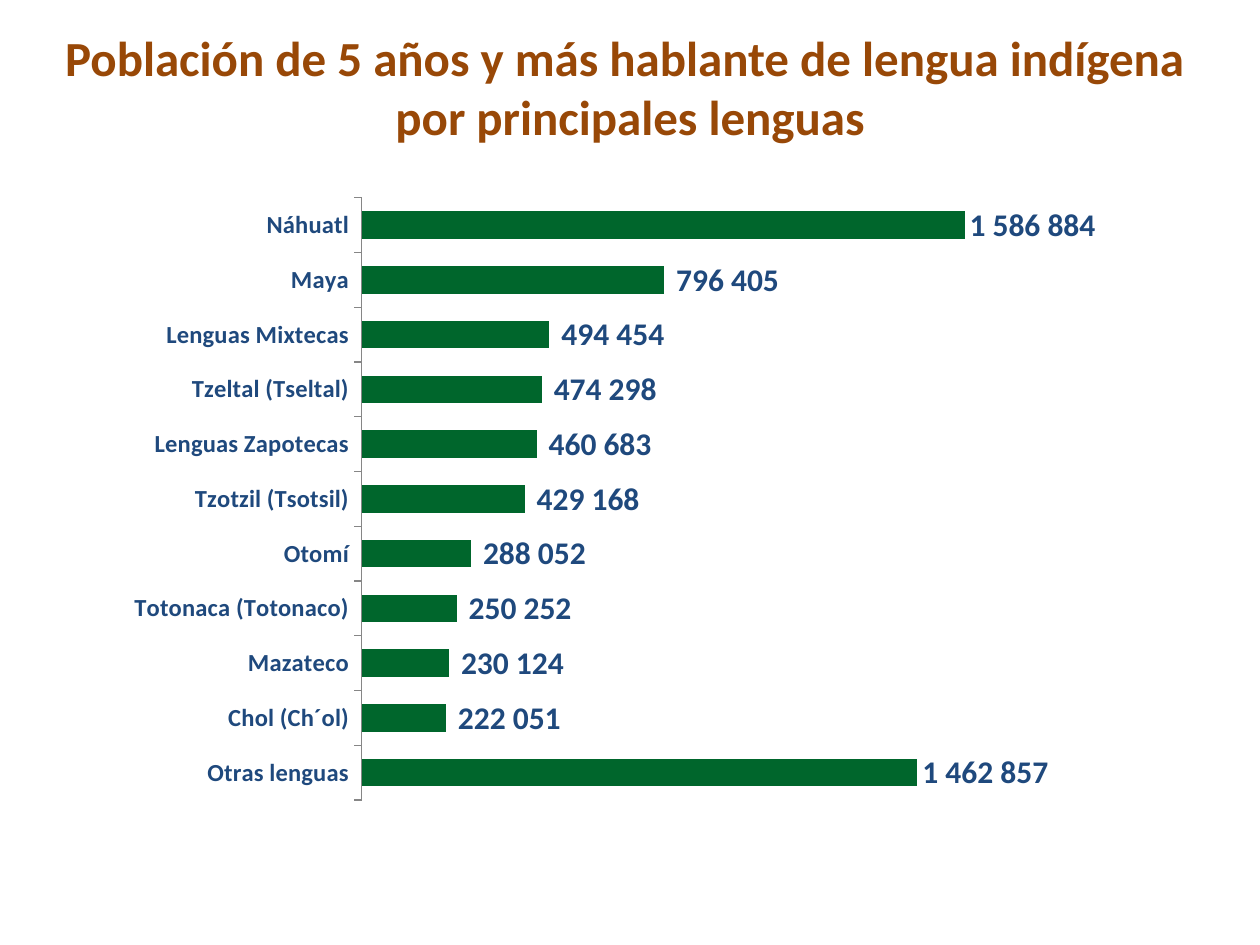
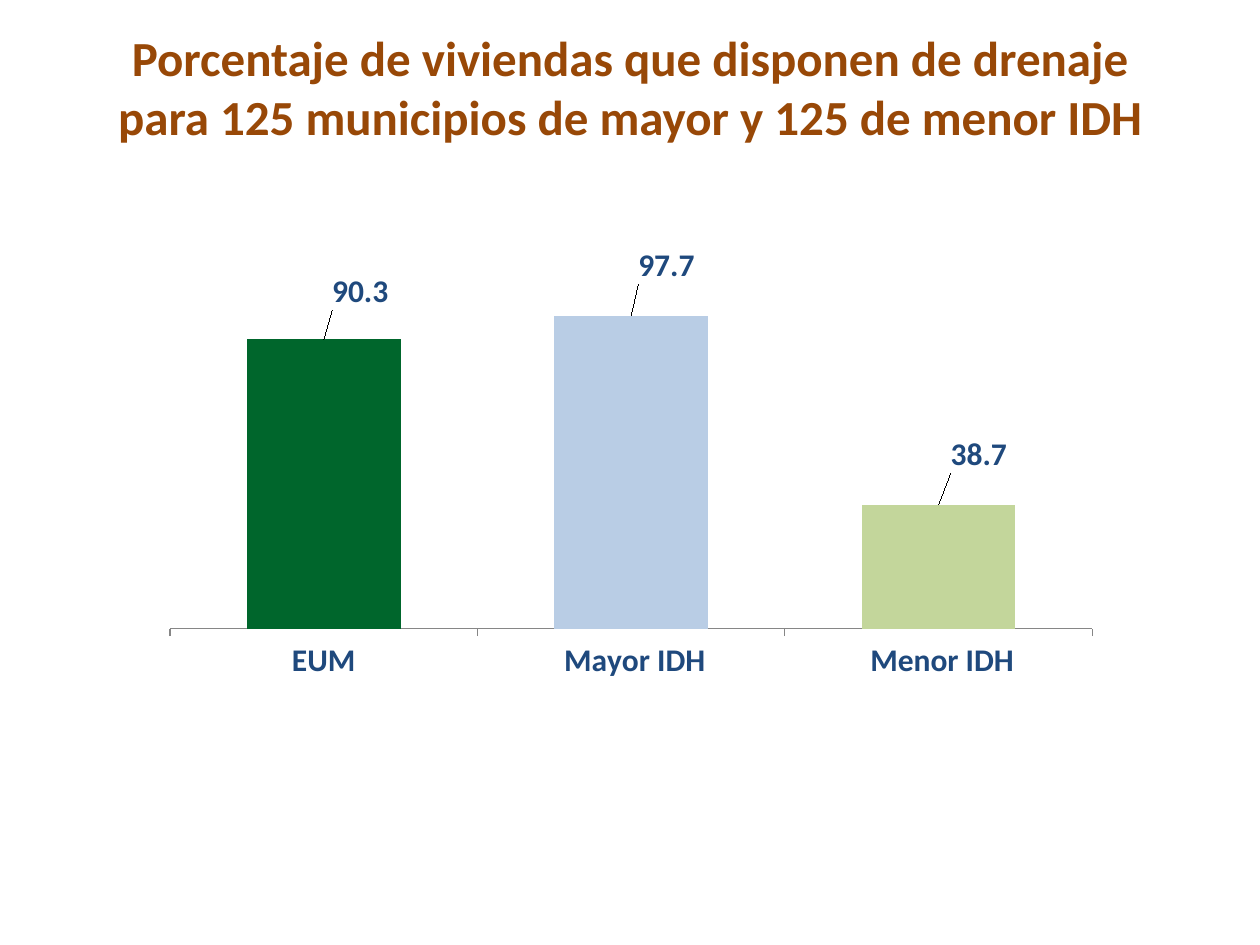
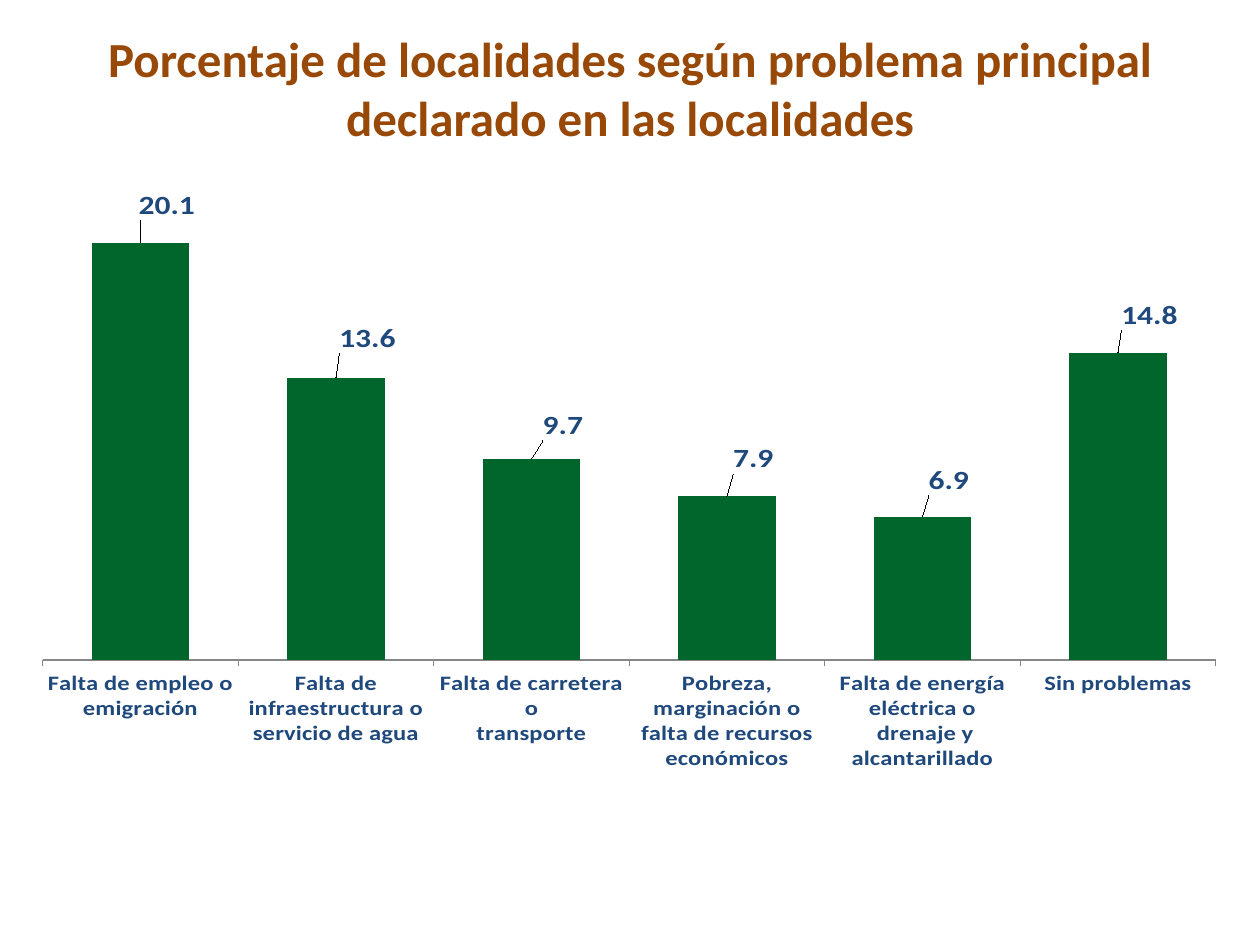
import pptx
import pptx.chart.data
import pptx.dml.color
import pptx.enum.chart
import pptx.enum.text
import pptx.oxml
import pptx.oxml.ns
import pptx.util
from pptx.dml.color import RGBColor
from pptx.enum.chart import XL_CHART_TYPE, XL_LABEL_POSITION, XL_TICK_LABEL_POSITION, XL_TICK_MARK
from pptx.util import Inches

# Shared colours and font
BROWN = RGBColor(0x98, 0x48, 0x07)
NAVY = RGBColor(0x1F, 0x49, 0x7D)
GREEN = RGBColor(0x00, 0x66, 0x2C)
PALE_BLUE = RGBColor(0xB9, 0xCD, 0xE5)
PALE_GREEN = RGBColor(0xC3, 0xD6, 0x9B)
GREY = RGBColor(0x86, 0x86, 0x86)
FONT = "Calibri"
TITLE_ONLY = 5


class Deck:
    """Holds the style and the current slide."""

    def __init__(self):
        self.presentation = pptx.Presentation()
        self.presentation.slide_width = Inches(10)
        self.presentation.slide_height = Inches(7.5)
        self.slide = None

    def style_font(self, font, size, color):
        font.name = FONT
        font.size = pptx.util.Pt(size)
        font.bold = True
        font.color.rgb = color

    def add_slide(self, title_lines, title_top, title_height):
        layout = self.presentation.slide_layouts[TITLE_ONLY]
        self.slide = self.presentation.slides.add_slide(layout)
        title = self.slide.shapes.title
        title.left, title.top = Inches(0), Inches(title_top)
        title.width, title.height = Inches(10), Inches(title_height)
        frame = title.text_frame
        frame.margin_left = frame.margin_right = frame.margin_top = frame.margin_bottom = 0
        frame.word_wrap = False
        frame.auto_size = pptx.enum.text.MSO_AUTO_SIZE.NONE
        frame.vertical_anchor = pptx.enum.text.MSO_ANCHOR.TOP
        paragraph = frame.paragraphs[0]
        paragraph.alignment = pptx.enum.text.PP_ALIGN.CENTER
        for index, line in enumerate(title_lines):
            if index:
                paragraph.add_line_break()
            run = paragraph.add_run()
            run.text = line
            self.style_font(run.font, 28, BROWN)

    def add_bars(self, kind, box, plot_box, values, maximum, number_format, axis_size):
        """Add a one-series bar chart; values maps each category to its value."""
        data = pptx.chart.data.CategoryChartData(number_format=number_format)
        data.categories = list(values)
        data.add_series("Series 1", list(values.values()))
        chart = self.slide.shapes.add_chart(kind, *map(Inches, box), data).chart
        chart.has_title = False
        chart.has_legend = False
        chart.font.name = FONT
        chart.font.size = pptx.util.Pt(10)

        # Axes
        category_axis = chart.category_axis
        category_axis.has_major_gridlines = False
        category_axis.major_tick_mark = XL_TICK_MARK.OUTSIDE
        category_axis.format.line.color.rgb = GREY
        self.style_font(category_axis.tick_labels.font, axis_size, NAVY)
        value_axis = chart.value_axis
        value_axis.minimum_scale = 0
        value_axis.maximum_scale = maximum
        value_axis.has_major_gridlines = False
        value_axis.major_tick_mark = XL_TICK_MARK.NONE
        value_axis.tick_label_position = XL_TICK_LABEL_POSITION.NONE
        value_axis.format.line.fill.background()

        # Bars and their labels
        plot = chart.plots[0]
        plot.gap_width = 100
        plot.vary_by_categories = False
        series = plot.series[0]
        series.format.fill.solid()
        series.format.fill.fore_color.rgb = GREEN
        labels = series.data_labels
        labels.show_value = True
        labels.number_format = number_format
        labels.number_format_is_linked = False
        labels.position = XL_LABEL_POSITION.OUTSIDE_END
        self.style_font(labels.font, 18, NAVY)

        # Inner plot area
        plot_area = chart.element.find(".//" + pptx.oxml.ns.qn("c:plotArea"))
        for layout in plot_area.findall(pptx.oxml.ns.qn("c:layout")):
            plot_area.remove(layout)
        plot_area.insert(0, self.make_layout(box, plot_box))
        return chart

    def make_layout(self, box, lengths):
        """Turn lengths in inches (x, y and maybe w, h) into shares of the chart."""
        marks = ""
        if len(lengths) == 4:
            marks = ('<c:layoutTarget val="inner"/>'
                     '<c:xMode val="edge"/><c:yMode val="edge"/>')
        shares = "".join(
            f'<c:{name} val="{length / whole:.4f}"/>'
            for name, length, whole in zip("xywh", lengths, box[2:] * 2))
        return pptx.oxml.parse_xml(
            f'<c:layout {pptx.oxml.ns.nsdecls("c")}>'
            f'<c:manualLayout>{marks}{shares}</c:manualLayout></c:layout>')

    def shift_labels(self, chart, box, shifts):
        """Move each value label by (x, y) inches from its usual place."""
        series = chart.plots[0].series[0]
        for index, shift in enumerate(shifts):
            label = series.points[index].data_label
            self.style_font(label.font, 18, NAVY)
            label.position = XL_LABEL_POSITION.OUTSIDE_END
        elements = chart.element.findall(".//" + pptx.oxml.ns.qn("c:dLbl"))
        for element, shift in zip(elements, shifts):
            element.insert(1, self.make_layout(box, shift))

    def color_points(self, chart, colors):
        for index, color in enumerate(colors):
            fill = chart.plots[0].series[0].points[index].format.fill
            fill.solid()
            fill.fore_color.rgb = color


def main():
    deck = Deck()

    # Slide 1: speakers by language
    deck.add_slide(["Población de 5 años y más hablante de lengua indígena ",
                    "por principales lenguas"], 0.22, 1.28)
    speakers = {
        "Otras lenguas": 1462857,
        "Chol (Ch´ol)": 222051,
        "Mazateco": 230124,
        "Totonaca (Totonaco)": 250252,
        "Otomí": 288052,
        "Tzotzil (Tsotsil)": 429168,
        "Lenguas Zapotecas": 460683,
        "Tzeltal (Tseltal)": 474298,
        "Lenguas Mixtecas": 494454,
        "Maya": 796405,
        "Náhuatl": 1586884,
    }
    chart = deck.add_bars(XL_CHART_TYPE.BAR_CLUSTERED, (0.65, 1.42, 8.55, 5.09),
                          (2.22, 0.15, 5.43, 4.78), speakers, 1800000,
                          r"#\ ###\ ##0", 14)
    chart.value_axis.visible = False

    # Slide 2: homes with drainage
    deck.add_slide(["Porcentaje de viviendas que disponen de drenaje",
                    "para 125 municipios de mayor y 125 de menor IDH"], 0.22, 0.87)
    drainage = {"EUM": 90.3, " Mayor IDH": 97.7, " Menor IDH": 38.7}
    box = (1.26, 1.7, 7.49, 4.1)
    chart = deck.add_bars(XL_CHART_TYPE.COLUMN_CLUSTERED, box,
                          (0.09, 0.24, 7.32, 3.05), drainage, 120, "0.0", 18)
    deck.color_points(chart, [GREEN, PALE_BLUE, PALE_GREEN])
    deck.shift_labels(chart, box, [(0.29, -0.19), (0.28, -0.21), (0.32, -0.21)])

    # Slide 3: main problem of each locality
    deck.add_slide(["Porcentaje de localidades según problema principal",
                    "declarado en las localidades"], 0.23, 0.68)
    problems = {
        "Falta de empleo o\nemigración": 20.1,
        "Falta de infraestructura o\nservicio de agua": 13.6,
        "Falta de carretera o\ntransporte": 9.7,
        "Pobreza, marginación o\nfalta de recursos económicos": 7.9,
        "Falta de energía eléctrica o\n drenaje y alcantarillado": 6.9,
        "Sin problemas": 14.8,
    }
    box = (0.23, 1.39, 9.53, 4.73)
    chart = deck.add_bars(XL_CHART_TYPE.COLUMN_CLUSTERED, box,
                          (0.11, 0.27, 9.31, 4.35), problems, 22, "0.0", 14)
    chart.value_axis.major_unit = 2
    deck.shift_labels(chart, box, [(0.21, -0.17), (0.25, -0.19), (0.25, -0.13),
                                   (0.21, -0.17), (0.21, -0.16), (0.25, -0.17)])

    deck.presentation.save("out.pptx")


if __name__ == "__main__":
    main()
